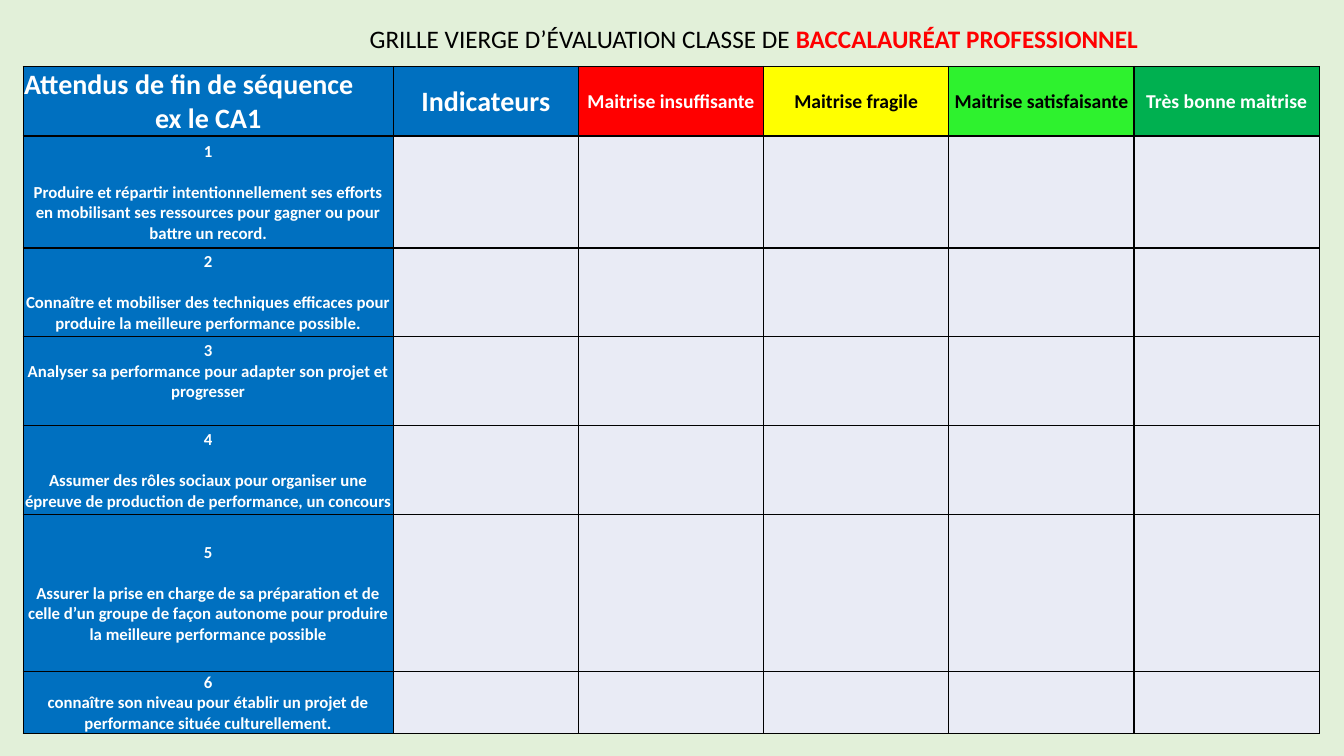
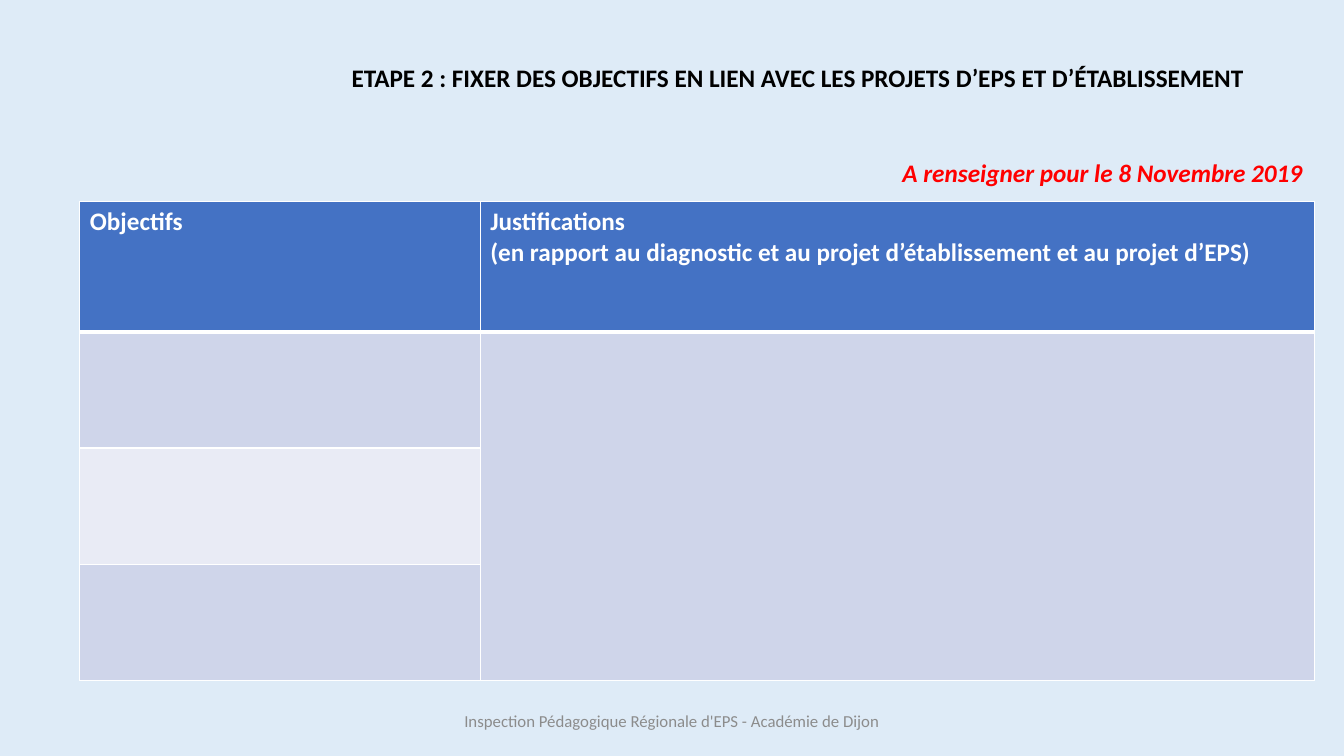
"""Build two evaluation slides: a blank grading grid and a table of goals."""
from dataclasses import dataclass

from lxml.etree import SubElement
from pptx import Presentation
from pptx.dml.color import RGBColor
from pptx.enum.text import MSO_ANCHOR, PP_ALIGN
from pptx.oxml.ns import qn
from pptx.util import Pt


@dataclass(frozen=True)
class Theme:
    """Hold the colours, font and type sizes of the deck."""
    font: str = "Calibri"
    black: str = "000000"
    white: str = "FFFFFF"
    red: str = "FF0000"
    gray: str = "8C8C8C"
    green: str = "E2F0D9"
    sky: str = "DEEBF7"
    blue: str = "0070C0"
    royal: str = "4472C4"
    pale: str = "E9EBF5"
    band: str = "CFD5EA"
    yellow: str = "FFFF00"
    lime: str = "2EF22E"
    leaf: str = "00B050"
    head: int = 20
    title: int = 18
    level: int = 14
    small: int = 12
    gap: float = 14.6


@dataclass(frozen=True)
class Run:
    """Describe a run of text."""
    text: str
    size: int
    color: str
    bold: bool = True
    slant: bool = False


T = Theme()
LEVELS = [
    ("Maitrise insuffisante", T.red, T.white),
    ("Maitrise fragile", T.yellow, T.black),
    ("Maitrise satisfaisante", T.lime, T.black),
    ("Très bonne maitrise", T.leaf, T.white),
]
# Each goal: text, row height, gap after the number, gap below the text.
GOALS = [
    ("Produire et répartir intentionnellement ses efforts en mobilisant ses "
     "ressources pour gagner ou pour battre un record.", 80, T.gap, 0),
    ("Connaître et mobiliser des techniques efficaces pour produire la "
     "meilleure performance possible.", 63.5, T.gap, 0),
    ("Analyser sa performance pour adapter son projet et progresser",
     63.5, 0, T.gap),
    ("Assumer des rôles sociaux pour organiser une épreuve de production de "
     "performance, un concours", 63.5, T.gap, 0),
    ("Assurer la prise en charge de sa préparation et de celle d’un groupe de "
     "façon autonome pour produire la meilleure performance possible",
     112, T.gap, 0),
    ("connaître son niveau pour établir un projet de performance située "
     "culturellement.", 43.5, 0, 0),
]


def write(frame, lines, align=PP_ALIGN.LEFT):
    """Fill a text frame with lines, each a list of runs."""
    for pos, line in enumerate(lines):
        para = frame.add_paragraph() if pos else frame.paragraphs[0]
        para.alignment = align
        for part in line:
            run = para.add_run()
            run.text = part.text
            font = run.font
            font.name, font.size = T.font, Pt(part.size)
            font.bold, font.italic = part.bold, part.slant
            font.color.rgb = RGBColor.from_string(part.color)


def add_text(slide, box, runs, align=PP_ALIGN.LEFT, anchor=MSO_ANCHOR.TOP):
    """Add a one-line text box."""
    frame = slide.shapes.add_textbox(*map(Pt, box)).text_frame
    frame.word_wrap = True
    frame.vertical_anchor = anchor
    write(frame, [runs], align)


def add_slide(deck, color):
    """Add a blank slide with a plain background."""
    slide = deck.slides.add_slide(deck.slide_layouts[6])
    slide.background.fill.solid()
    slide.background.fill.fore_color.rgb = RGBColor.from_string(color)
    return slide


def add_grid(slide, left, top, cols, rows):
    """Add a plain table with the given column widths and row heights."""
    size = map(Pt, (left, top, sum(cols), sum(rows)))
    grid = slide.shapes.add_table(len(rows), len(cols), *size).table
    grid.first_row = grid.horz_banding = False
    for col, width in zip(grid.columns, cols):
        col.width = Pt(width)
    for row, height in zip(grid.rows, rows):
        row.height = Pt(height)
    return grid


def style(cell, fill, line, top=1, base=1):
    """Set the borders and fill of a cell."""
    props = cell._tc.get_or_add_tcPr()
    for side, width in zip("LRTB", (1, 1, top, base)):
        edge = SubElement(props, qn(f"a:ln{side}"), w=str(Pt(width)))
        paint = SubElement(edge, qn("a:solidFill"))
        SubElement(paint, qn("a:srgbClr"), val=line)
    cell.fill.solid()
    cell.fill.fore_color.rgb = RGBColor.from_string(fill)


def label(cell, lines):
    """Write centred lines in a cell with thin margins."""
    cell.margin_left = cell.margin_right = cell.margin_top = Pt(0.72)
    cell.margin_bottom = Pt(0)
    cell.vertical_anchor = MSO_ANCHOR.MIDDLE
    write(cell.text_frame, lines, PP_ALIGN.CENTER)


def grade_slide(deck):
    """Build the blank grading grid."""
    slide = add_slide(deck, T.green)
    rows = [48] + [goal[1] for goal in GOALS]
    grid = add_grid(slide, 16.5, 47.4, [264.4] + [132.3] * 5, rows)
    fills = [T.blue, T.blue] + [fill for _, fill, _ in LEVELS]
    for row in range(len(rows)):
        for col, fill in enumerate(fills):
            shade = fill if row == 0 or col == 0 else T.pale
            style(grid.cell(row, col), shade, T.black)

    first = grid.cell(0, 0)
    label(first, [[Run(text, T.head, T.white)] for text in
                  ("Attendus de fin de séquence", "ex le CA1")])
    first.text_frame.paragraphs[0].alignment = PP_ALIGN.LEFT
    label(grid.cell(0, 1), [[Run("Indicateurs", T.head, T.white)]])
    for col, (text, _, ink) in enumerate(LEVELS, 2):
        label(grid.cell(0, col), [[Run(text, T.level, ink)]])
    for row, (text, _, gap, base) in enumerate(GOALS, 1):
        cell = grid.cell(row, 0)
        label(cell, [[Run(part, T.small, T.white)]
                     for part in (str(row), text)])
        cell.text_frame.paragraphs[0].space_after = Pt(gap)
        cell.margin_bottom = Pt(base)

    add_text(slide, (257, 13, 685.5, 29), [
        Run("GRILLE VIERGE D’ÉVALUATION CLASSE DE ", T.title, T.black, False),
        Run("BACCALAURÉAT PROFESSIONNEL", T.title, T.red)])


def goal_slide(deck):
    """Build the table of goals and reasons."""
    slide = add_slide(deck, T.sky)
    add_text(slide, (244, 41, 658, 29), [
        Run("ETAPE 2 : FIXER DES OBJECTIFS EN LIEN AVEC LES PROJETS D’EPS "
            "ET D’ÉTABLISSEMENT", T.title, T.black)])

    grid = add_grid(slide, 57, 144, [286, 596], [93] + [83] * 3)
    fills = [(T.royal, T.royal), (T.band, T.band),
             (T.pale, T.band), (T.band, T.band)]
    for row, pair in enumerate(fills):
        for col, fill in enumerate(pair):
            style(grid.cell(row, col), fill, T.white,
                  top=3 if row == 1 else 1, base=3 if row == 0 else 1)
    grid.cell(1, 1).merge(grid.cell(3, 1))
    heads = [
        ["Objectifs"],
        ["Justifications", "(en rapport au diagnostic et au projet "
         "d’établissement et au projet d’EPS)"],
    ]
    for col, lines in enumerate(heads):
        write(grid.cell(0, col).text_frame,
              [[Run(text, T.title, T.white)] for text in lines])

    add_text(slide, (318, 500.5, 324, 29), [
        Run("Inspection Pédagogique Régionale d'EPS - Académie de Dijon",
            T.small, T.gray, False)], PP_ALIGN.CENTER, MSO_ANCHOR.MIDDLE)
    add_text(slide, (637.5, 108.5, 312, 29), [
        Run("A renseigner pour le 8 Novembre 2019", T.title, T.red,
            slant=True)])


def main():
    """Build and save the deck."""
    deck = Presentation()
    deck.slide_width, deck.slide_height = Pt(960), Pt(540)
    grade_slide(deck)
    goal_slide(deck)
    deck.save("out.pptx")


if __name__ == "__main__":
    main()
